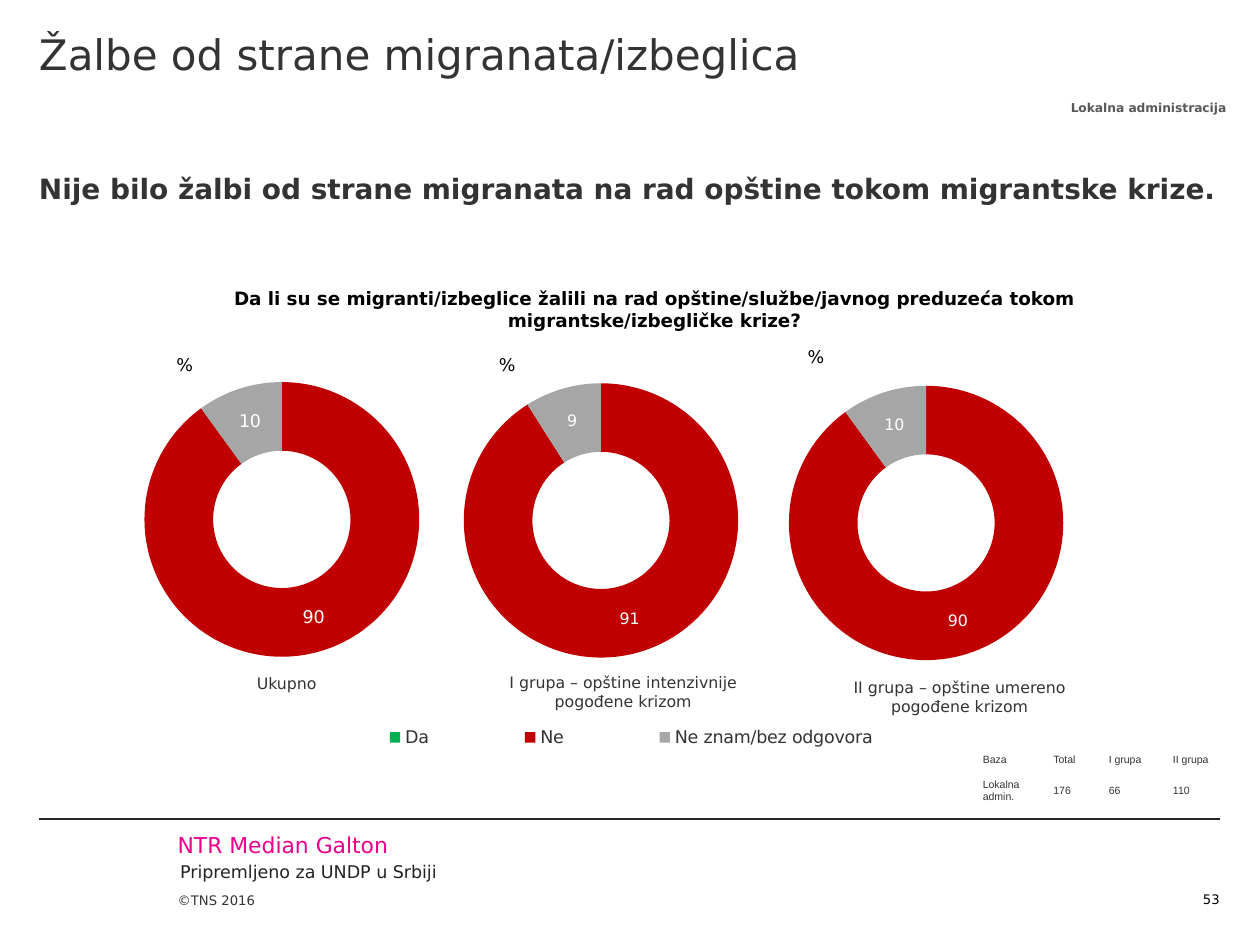
from typing import NamedTuple

from lxml import etree
from pptx import Presentation
from pptx.chart.data import CategoryChartData
from pptx.dml.color import RGBColor
from pptx.enum import chart as ch, shapes, text
from pptx.oxml import ns, parse_xml
from pptx.util import Inches, Pt

FONT = "DejaVu Sans"
BLACK = RGBColor(0x00, 0x00, 0x00)
DARK = RGBColor(0x33, 0x33, 0x33)
RULE = RGBColor(0x26, 0x26, 0x26)
CLIENT = RGBColor(0x23, 0x23, 0x23)
MUTED = RGBColor(0x59, 0x59, 0x59)
MAGENTA = RGBColor(0xEC, 0x00, 0x8C)
WHITE = RGBColor(0xFF, 0xFF, 0xFF)
GREEN = RGBColor(0x00, 0xB0, 0x50)
RED = RGBColor(0xC0, 0x00, 0x00)
GREY = RGBColor(0xA6, 0xA6, 0xA6)

LEFT, CENTER, RIGHT = (text.PP_ALIGN.LEFT, text.PP_ALIGN.CENTER, text.PP_ALIGN.RIGHT)
TOP, MIDDLE, BOTTOM = (text.MSO_ANCHOR.TOP, text.MSO_ANCHOR.MIDDLE, text.MSO_ANCHOR.BOTTOM)


class Box(NamedTuple):
    left: float
    top: float
    width: float
    height: float

    def lengths(self) -> list:
        return [Inches(value) for value in self]


class Ring(NamedTuple):
    """One doughnut with its caption and percent sign."""
    box: Box
    plot: Box  # inner plot area, as fractions of the chart
    categories: tuple
    values: tuple
    label_size: float
    caption: str
    caption_box: Box
    percent_at: tuple
    legend: Box | None = None  # fractions of the chart


def format_frame(frame, wording: str, *, size: float, color=DARK, bold=False,
                 font=FONT, align=LEFT) -> None:
    paragraph = frame.paragraphs[0]
    paragraph.alignment = align
    run = paragraph.add_run()
    run.text = wording
    run.font.name, run.font.size, run.font.bold = font, Pt(size), bold
    run.font.color.rgb = color


def add_text(slide, wording: str, box: Box, *, anchor=TOP, insets=(0, 0, 0, 0),
             wrap=True, **style) -> None:
    frame = slide.shapes.add_textbox(*box.lengths()).text_frame
    frame.word_wrap = wrap
    frame.vertical_anchor = anchor
    (frame.margin_left, frame.margin_top,
     frame.margin_right, frame.margin_bottom) = map(Inches, insets)
    format_frame(frame, wording, **style)


def layout_xml(area: Box, inner: bool):
    target = '<c:layoutTarget val="inner"/>' if inner else ""
    return parse_xml(
        f'<c:layout {ns.nsdecls("c")}><c:manualLayout>{target}'
        '<c:xMode val="edge"/><c:yMode val="edge"/>'
        f'<c:x val="{area.left}"/><c:y val="{area.top}"/>'
        f'<c:w val="{area.width}"/><c:h val="{area.height}"/>'
        '</c:manualLayout></c:layout>')


def set_layout(parent, area: Box, inner: bool, index: int) -> None:
    for old in parent.findall(ns.qn("c:layout")):
        parent.remove(old)
    parent.insert(index, layout_xml(area, inner))


def add_ring(slide, ring: Ring) -> None:
    data = CategoryChartData()
    data.categories = ring.categories
    data.add_series("Series 1", ring.values)
    chart = slide.shapes.add_chart(
        ch.XL_CHART_TYPE.DOUGHNUT, *ring.box.lengths(), data).chart
    chart.has_title = False
    chart.font.name, chart.font.size = FONT, Pt(18)
    chart.font.color.rgb = BLACK
    plot = chart.plots[0]
    plot.vary_by_categories = True
    plot_area = chart.element.find(".//" + ns.qn("c:plotArea"))
    set_layout(plot_area, ring.plot, True, 0)
    plot_area.find(".//" + ns.qn("c:holeSize")).set("val", "40")

    series = plot.series[0]
    for index, color in enumerate((GREEN, RED, GREY)):
        fill = series.points[index].format.fill
        fill.solid()
        fill.fore_color.rgb = color

    labels = series.data_labels
    labels.show_value = True
    labels.show_percentage = False
    labels.number_format, labels.number_format_is_linked = "0", False
    labels.font.name, labels.font.size = FONT, Pt(ring.label_size)
    labels.font.color.rgb = WHITE
    # The empty slice carries no label
    labels._element.insert(0, parse_xml(
        f'<c:dLbl {ns.nsdecls("c")}><c:idx val="0"/><c:delete val="1"/></c:dLbl>'))

    chart.has_legend = ring.legend is not None
    if ring.legend:
        legend = chart.legend
        legend.position = ch.XL_LEGEND_POSITION.BOTTOM
        legend.include_in_layout = False
        legend.font.name, legend.font.size = FONT, Pt(10)
        legend.font.color.rgb = DARK
        set_layout(legend._element, ring.legend, False, 1)

    add_text(slide, ring.caption, ring.caption_box, anchor=BOTTOM, size=9, align=CENTER)
    add_text(slide, "%", Box(*ring.percent_at, 0.36, 0.17), size=10, color=BLACK)


def add_base_table(slide, rows: list, box: Box, widths: tuple, heights: tuple) -> None:
    table = slide.shapes.add_table(len(rows), len(widths), *box.lengths()).table
    table.first_row = table.horz_banding = False
    for column, width in zip(table.columns, widths):
        column.width = Inches(width)
    for r, (row, height) in enumerate(zip(rows, heights)):
        table.rows[r].height = Inches(height)
        for c, wording in enumerate(row):
            cell = table.cell(r, c)
            cell.vertical_anchor = MIDDLE
            cell.margin_top = cell.margin_bottom = Inches(0.04)
            format_frame(cell.text_frame, wording, size=6, font="Arial")
            properties = cell._tc.get_or_add_tcPr()
            for side in "LRTB":
                points = 3 if side == "B" and r == 0 else 1
                edge = etree.SubElement(properties, ns.qn(f"a:ln{side}"), w=str(Pt(points)))
                paint = etree.SubElement(edge, ns.qn("a:solidFill"))
                etree.SubElement(paint, ns.qn("a:srgbClr"), val=str(WHITE))
            cell.fill.background()


SMALL_PLOT = Box(0.01, 0.01, 1, 0.99)
NUMBERS = ("1", "2", "3")
RINGS = [
    Ring(Box(0.31, 2.09, 9.4, 4.4), Box(0.089, 0.198, 0.232, 0.528),
         ("Da", "Ne", "Ne znam/bez odgovora"), (0, 90, 10), 10,
         "Ukupno", Box(1.18, 4.83, 2.19, 0.67), (1.4, 2.81),
         legend=Box(0.22, 0.82, 0.56, 0.07)),
    Ring(Box(3.66, 3.02, 2.22, 2.2), SMALL_PLOT, NUMBERS, (0, 91, 9), 9,
         "I grupa – opštine intenzivnije pogođene krizom",
         Box(3.85, 4.97, 2.19, 0.67), (3.96, 2.81)),
    Ring(Box(6.24, 3.04, 2.22, 2.2), SMALL_PLOT, NUMBERS, (0, 90, 10), 9,
         "II grupa – opštine umereno pogođene krizom",
         Box(6.52, 5.01, 2.19, 0.67), (6.41, 2.75)),
]


def main() -> None:
    deck = Presentation()
    deck.slide_width, deck.slide_height = Inches(10), Inches(7.5)
    slide = deck.slides.add_slide(deck.slide_layouts[6])

    # Footer
    rule = slide.shapes.add_connector(
        shapes.MSO_CONNECTOR.STRAIGHT, *Box(0.31, 6.5, 9.68, 6.5).lengths())
    rule.line.color.rgb, rule.line.width = RULE, Pt(0.75)
    etree.SubElement(rule._element.spPr, ns.qn("a:effectLst"))
    add_text(slide, "©TNS 2016", Box(1.41, 6.92, 0.83, 0.29), anchor=BOTTOM, size=7.5)
    add_text(slide, "NTR Median Galton", Box(1.41, 6.6, 3.31, 0.21),
             size=12.5, color=MAGENTA)
    add_text(slide, "Pripremljeno za UNDP u Srbiji", Box(1.43, 6.83, 6.81, 0.17),
             size=10, color=CLIENT)
    add_text(slide, "53", Box(9.13, 6.92, 0.55, 0.28), anchor=BOTTOM,
             size=7.5, color=BLACK, align=RIGHT)

    # Headings
    add_text(slide, "Žalbe od strane migranata/izbeglica", Box(0.31, 0, 9.37, 1.13),
             insets=(0, 0.23, 0, 0), size=24)
    add_text(slide, "Lokalna administracija", Box(8.39, 0.75, 1.45, 0.22), wrap=False,
             insets=(0.1, 0.05, 0.1, 0.05), size=7, color=MUTED, bold=True, align=CENTER)
    add_text(slide, "Nije bilo žalbi od strane migranata na rad opštine tokom migrantske krize.",
             Box(0.31, 1.13, 9.37, 0.83), insets=(0, 0.23, 0, 0), size=16, bold=True)

    # Charts and their question
    for ring in RINGS:
        add_ring(slide, ring)
    add_text(slide, "Da li su se migranti/izbeglice žalili na rad opštine/službe/javnog "
             "preduzeća tokom migrantske/izbegličke krize?", Box(1.18, 2.23, 7.53, 0.45),
             insets=(0.6, 0.05, 0.1, 0.05), size=10.5, color=BLACK, bold=True, align=CENTER)

    # Sample sizes
    add_base_table(slide, [("Baza", "Total", "I grupa", "II grupa"),
                           ("Lokalna admin.", "176", "66", "110")],
                   Box(7.7, 5.94, 2.07, 0.48), (0.56, 0.44, 0.51, 0.56), (0.19, 0.29))
    deck.save("out.pptx")


if __name__ == "__main__":
    main()
